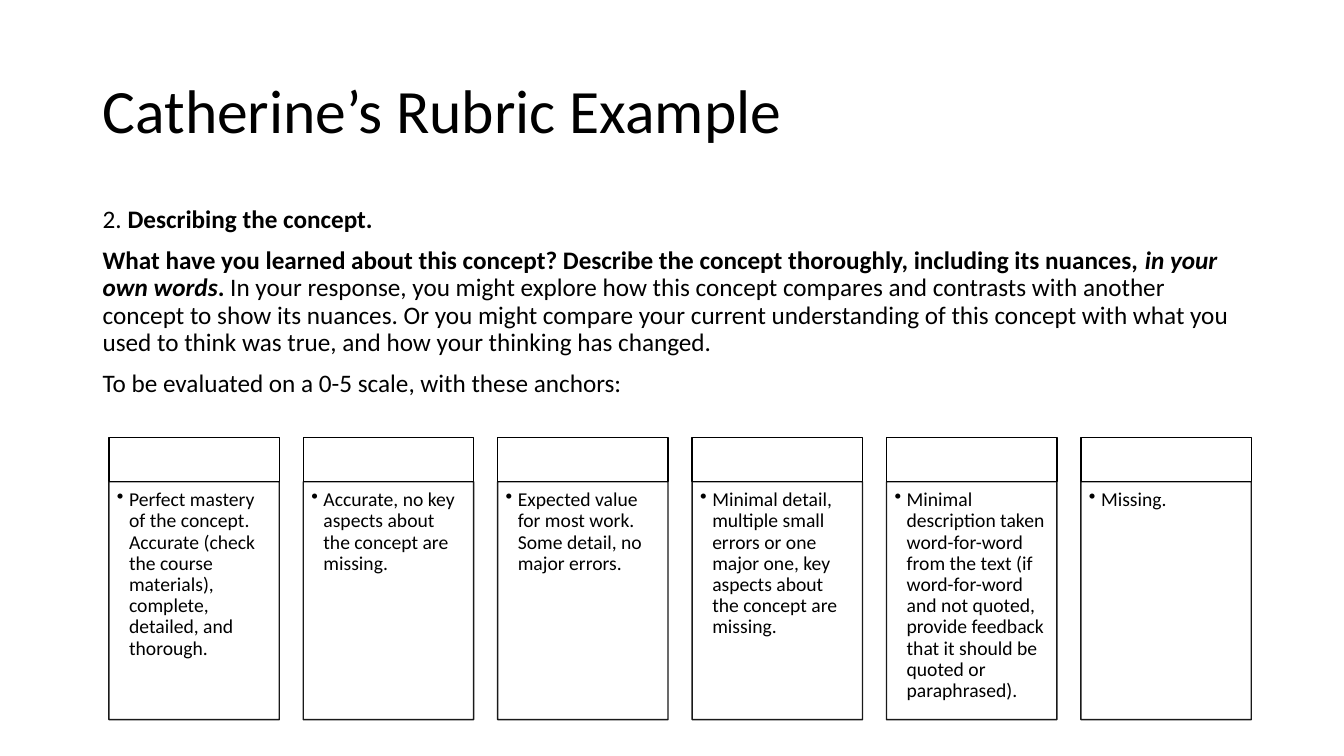
import pptx
import pptx.dml.color
import pptx.enum.shapes
import pptx.enum.text
import pptx.oxml.ns
import pptx.util
from lxml import etree

COLORS = {"ink": "000000", "paper": "FFFFFF"}
ANCHORS = [
    "Perfect mastery of the concept. Accurate (check the course materials), complete, detailed, and thorough.",
    "Accurate, no key aspects about the concept are missing.",
    "Expected value for most work. Some detail, no major errors.",
    "Minimal detail, multiple small errors or one major one, key aspects about the concept are missing.",
    "Minimal description taken word-for-word from the text (if word-for-word and not quoted, "
    "provide feedback that it should be quoted or paraphrased).",
    "Missing.",
]
QUESTION = [
    [("2. ", {}), ("Describing the concept.", {"bold": True})],
    [
        ("What have you learned about this concept? Describe the concept thoroughly, "
         "including its nuances, ", {"bold": True}),
        ("in your own words", {"bold": True, "italic": True}),
        (".", {"bold": True}),
        (" In your response, you might explore how this concept compares and contrasts with "
         "another concept to show its nuances. Or you might compare your current understanding "
         "of this concept with what you used to think was true, and how your thinking has "
         "changed.", {}),
    ],
    [("To be evaluated on a 0-5 scale, with these anchors:", {})],
]


def color(name):
    return pptx.dml.color.RGBColor.from_string(COLORS[name])


def add_run(paragraph, text, size=18, bold=False, italic=False):
    run = paragraph.add_run()
    run.text = text
    run.font.name = "Calibri"
    run.font.size = pptx.util.Pt(size)
    run.font.bold = bold
    run.font.italic = italic
    run.font.color.rgb = color("ink")


def set_opacity(fill_parent, percent):
    """Make the solid fill directly inside an XML element partly transparent."""
    solid_color = fill_parent.find(pptx.oxml.ns.qn("a:solidFill"))[0]
    etree.SubElement(solid_color, pptx.oxml.ns.qn("a:alpha"), val=str(percent * 1000))


def add_bullet(paragraph, indent):
    properties = paragraph._p.get_or_add_pPr()
    properties.set("marL", str(pptx.util.Inches(indent)))
    properties.set("indent", str(-pptx.util.Inches(indent)))
    etree.SubElement(properties, pptx.oxml.ns.qn("a:buChar"), char="•")


class RubricSlide:
    """The slide with its card grid; positions are in inches."""

    columns = len(ANCHORS)
    grid_left, grid_right = 1.08, 12.41
    card_width = 1.69
    head_top, body_top, body_bottom = 4.34, 4.78, 7.14

    def __init__(self, presentation):
        self.slide = presentation.slides.add_slide(presentation.slide_layouts[6])
        spare = self.grid_right - self.grid_left - self.card_width
        self.pitch = spare / (self.columns - 1)

    def text(self, left, top, width, height, paragraphs, size=18, space_before=0, anchor="TOP"):
        box = self.slide.shapes.add_textbox(*map(pptx.util.Inches, (left, top, width, height)))
        frame = box.text_frame
        frame.word_wrap = True
        frame.vertical_anchor = pptx.enum.text.MSO_ANCHOR[anchor]
        for index, runs in enumerate(paragraphs):
            paragraph = frame.add_paragraph() if index else frame.paragraphs[0]
            paragraph.line_spacing = 0.9
            paragraph.space_before = pptx.util.Pt(space_before)
            for text, style in runs:
                add_run(paragraph, text, size=size, **style)

    def cell(self, column, top, bottom):
        left = self.grid_left + column * self.pitch
        shape = self.slide.shapes.add_shape(
            pptx.enum.shapes.MSO_SHAPE.RECTANGLE,
            *map(pptx.util.Inches, (left, top, self.card_width, bottom - top)))
        shape.shadow.inherit = False
        shape.fill.solid()
        shape.fill.fore_color.rgb = color("paper")
        shape.line.color.rgb = color("ink")
        shape.line.width = pptx.util.Pt(1)
        return shape

    def card(self, column, text):
        self.cell(column, self.head_top, self.body_top)
        body = self.cell(column, self.body_top, self.body_bottom)
        properties = body._element.spPr
        set_opacity(properties, 90)
        set_opacity(properties.find(pptx.oxml.ns.qn("a:ln")), 90)
        frame = body.text_frame
        frame.word_wrap = True
        frame.vertical_anchor = pptx.enum.text.MSO_ANCHOR.TOP
        frame.margin_left = frame.margin_top = pptx.util.Inches(0.08)
        frame.margin_right = pptx.util.Inches(0.11)
        frame.margin_bottom = pptx.util.Inches(0.12)
        paragraph = frame.paragraphs[0]
        paragraph.alignment = pptx.enum.text.PP_ALIGN.LEFT
        paragraph.line_spacing = 0.9
        add_bullet(paragraph, 0.12)
        add_run(paragraph, text, size=14)


def main():
    presentation = pptx.Presentation()
    presentation.slide_width = pptx.util.Inches(13.33)
    presentation.slide_height = pptx.util.Inches(7.5)
    rubric = RubricSlide(presentation)
    rubric.text(0.92, 0.4, 11.5, 1.45, [[("Catherine’s Rubric Example", {})]],
                size=44, anchor="MIDDLE")
    rubric.text(0.92, 2, 11.5, 2.32, QUESTION, space_before=10)
    for column, anchor_text in enumerate(ANCHORS):
        rubric.card(column, anchor_text)
    presentation.save("out.pptx")


if __name__ == "__main__":
    main()
